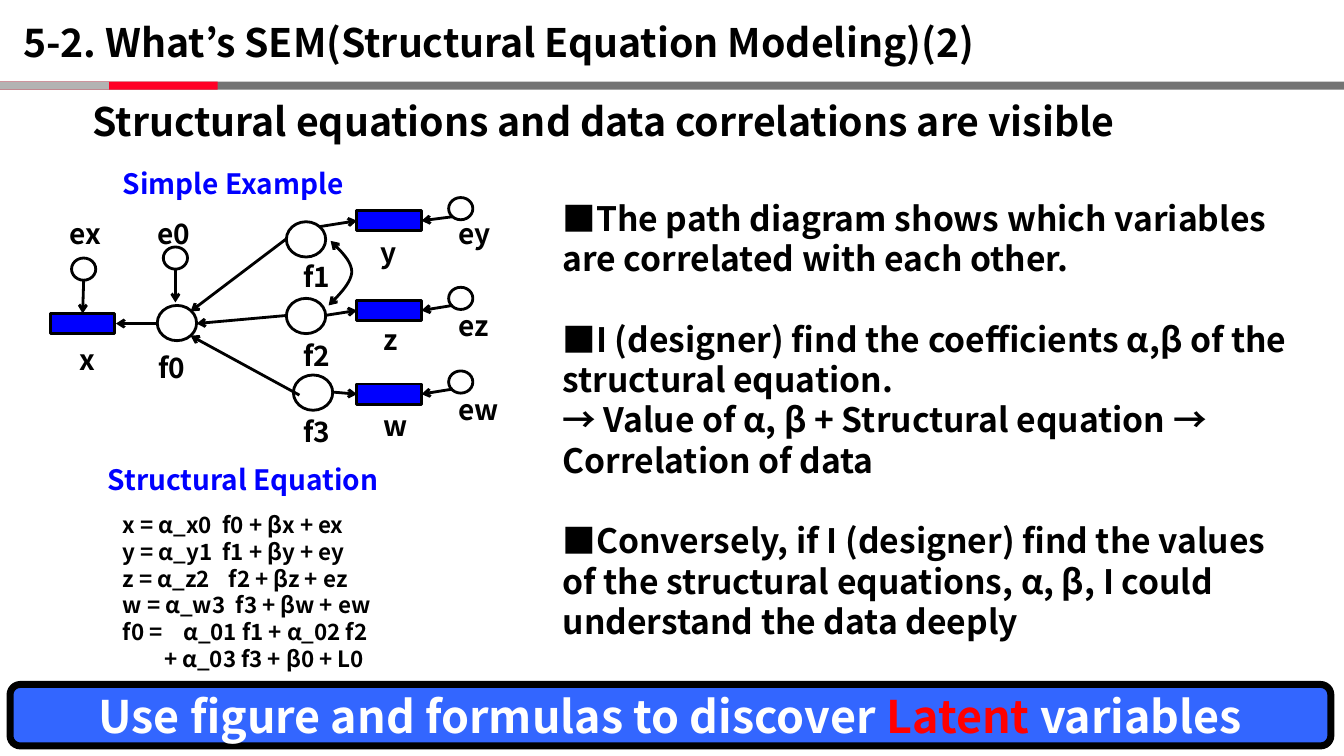
from lxml import etree
from pptx import Presentation
from pptx.dml.color import RGBColor
from pptx.enum.shapes import MSO_CONNECTOR as CONNECTOR, MSO_SHAPE as SHAPE
from pptx.enum.text import MSO_ANCHOR as ANCHOR, MSO_AUTO_SIZE as AUTO_SIZE, PP_ALIGN as ALIGN
from pptx.oxml.ns import qn
from pptx.util import Pt

EMU_PER_PX = 9144
COLORS = {
    "black": "000000", "white": "FFFFFF", "blue": "0000FF", "banner": "3366FF",
    "red": "FF0000", "rule": "737373", "rule red": "FF0026", "rule light": "B3B3B3",
}


def px(value):
    return round(value * EMU_PER_PX)


class SlideBuilder:
    """Draws styled elements on one slide, with lengths in px of 1/100 inch."""

    font_name = "Noto Sans CJK JP"
    line_height = 1.2
    frame_format = {"word_wrap": True, "auto_size": AUTO_SIZE.NONE, "vertical_anchor": ANCHOR.TOP}
    paragraph_format = {"alignment": ALIGN.LEFT, "space_before": Pt(0), "space_after": Pt(0)}

    def __init__(self, slide):
        self.slide = slide
        self.shapes = slide.shapes

    def color(self, name):
        return RGBColor.from_string(COLORS[name])

    def style(self, target, values):
        for name, value in values.items():
            setattr(target, name, value)

    def place(self, shape, box):
        self.style(shape, dict(zip(("left", "top", "width", "height"), map(px, box))))

    def fill_text(self, shape, paragraphs, size, color="black", frame=None, layout=None):
        text_frame = shape.text_frame
        self.style(text_frame, {**self.frame_format, **(frame or {})})
        for index, content in enumerate(paragraphs):
            paragraph = text_frame.add_paragraph() if index else text_frame.paragraphs[0]
            spacing = {"line_spacing": Pt(size * self.line_height)}
            self.style(paragraph, {**self.paragraph_format, **spacing, **(layout or {})})
            runs = [(content, color)] if isinstance(content, str) else content
            for text, run_color in runs:
                run = paragraph.add_run()
                run.text = text
                self.style(run.font, {"name": self.font_name, "size": Pt(size), "bold": True})
                run.font.color.rgb = self.color(run_color)
                etree.SubElement(run._r.get_or_add_rPr(), qn("a:ea"), typeface=self.font_name)
        return text_frame.paragraphs

    def text(self, box, paragraphs, size, color="black"):
        return self.fill_text(self.shapes.add_textbox(*map(px, box)), paragraphs, size, color)

    def placeholder(self, shape, box, paragraphs, size):
        self.place(shape, box)
        filled = self.fill_text(shape, paragraphs, size)
        for paragraph in filled:
            self.indent(paragraph, 0)
            etree.SubElement(paragraph._p.get_or_add_pPr(), qn("a:buNone"))
        return filled

    def indent(self, paragraph, margin):
        properties = paragraph._p.get_or_add_pPr()
        properties.set("marL", str(px(margin)))
        properties.set("indent", "0")

    def tab_stop(self, paragraph, position):
        tabs = etree.SubElement(paragraph._p.get_or_add_pPr(), qn("a:tabLst"))
        etree.SubElement(tabs, qn("a:tab"), pos=str(px(position)), algn="l")

    def shape(self, kind, box, fill=None, line=None, width=2):
        shape = self.shapes.add_shape(kind, *map(px, box))
        return self.paint(shape, fill, line, width)

    def paint(self, shape, fill=None, line=None, width=2):
        shape.shadow.inherit = False
        for part, name in ((shape.fill, fill), (shape.line.fill, line)):
            if name:
                part.solid()
                part.fore_color.rgb = self.color(name)
            else:
                part.background()
        if line:
            shape.line.width = Pt(width)
        return shape

    def arrowheads(self, shape, ends):
        outline = shape._element.spPr.find(qn("a:ln"))
        for end in ends:
            etree.SubElement(outline, qn(f"a:{end}"), type="arrow")

    def arrow(self, start, end):
        connector = self.shapes.add_connector(CONNECTOR.STRAIGHT, *map(px, start + end))
        connector.line.color.rgb = self.color("black")
        connector.line.width = Pt(2)
        self.arrowheads(connector, ["tailEnd"])
        etree.SubElement(connector._element.spPr, qn("a:effectLst"))

    def curve(self, beziers, steps=10):
        points = [beziers[0][0]]
        for a, b, c, d in beziers:
            for t in (step / steps for step in range(1, steps + 1)):
                weights = ((1 - t) ** 3, 3 * t * (1 - t) ** 2, 3 * t * t * (1 - t), t ** 3)
                points.append(tuple(
                    sum(w * p[axis] for w, p in zip(weights, (a, b, c, d))) for axis in (0, 1)
                ))
        points = [(px(x), px(y)) for x, y in points]
        freeform = self.shapes.build_freeform(*points[0], scale=1.0)
        freeform.add_line_segments(points[1:], close=False)
        shape = self.paint(freeform.convert_to_shape(), line="black")
        self.arrowheads(shape, ["headEnd", "tailEnd"])


def draw_header(builder):
    for width, color in ((1333, "rule"), (216, "rule red"), (108, "rule light")):
        builder.shape(SHAPE.RECTANGLE, (0, 81, width, 8), color)
    title = ["5-2. What’s SEM(Structural Equation Modeling)(2)"]
    builder.placeholder(builder.shapes.title, (13, 13, 1069, 57), title, 28)
    subtitle = ["Structural equations and data correlations are visible"]
    builder.text((82, 92, 1120, 57), subtitle, 28)


def draw_diagram(builder):
    builder.text((112, 160, 277, 44), ["Simple Example"], 20, "blue")
    for left, top in ((156, 303), (284, 220), (284, 296), (291, 372)):
        builder.shape(SHAPE.OVAL, (left, top, 39, 35), line="black")
    for left, top in ((71, 256), (162, 245), (445, 196), (445, 285), (445, 368)):
        builder.shape(SHAPE.OVAL, (left, top, 24, 22), line="black")
    for left, top in ((50, 311), (354, 209), (354, 298), (354, 381)):
        builder.shape(SHAPE.RECTANGLE, (left, top, 64, 20), "blue", "black")
    for start, end in (
        ((284, 237), (189, 309)), ((284, 313), (195, 321)), ((297, 392), (189, 333)),
        ((156, 321), (115, 321)), ((83, 278), (82, 311)), ((174, 267), (174, 300)),
        ((316, 225), (354, 219)), ((322, 313), (354, 308)), ((330, 389), (354, 391)),
        ((449, 215), (418, 219)), ((449, 303), (418, 308)), ((449, 386), (418, 391)),
    ):
        builder.arrow(start, end)
    builder.curve([
        ((328, 239), (338, 249), (349, 259), (349, 270)),
        ((349, 270), (348, 281), (337, 292), (326, 303)),
    ])
    for label, left, top, width in (
        ("x", 69, 335, 32), ("y", 368, 229, 32), ("z", 371, 315, 32), ("w", 371, 400, 32),
        ("f0", 147, 343, 57), ("f1", 291, 253, 57), ("f2", 291, 331, 57), ("f3", 291, 406, 57),
        ("ex", 59, 210, 57), ("e0", 146, 210, 57),
        ("ey", 445, 210, 57), ("ez", 445, 301, 57), ("ew", 445, 384, 74),
    ):
        builder.text((left, top, width, 36), [label], 20)


def draw_equations(builder):
    builder.text((97, 454, 356, 44), ["Structural Equation"], 20, "blue")
    equations = {
        "x = α_x0\tf0 + βx + ex": 99,
        "y = α_y1\tf1 + βy + ey": 99,
        "z = α_z2\tf2 + βz + ez": 105,
        "w = α_w3\tf3 + βw + ew": 112,
        "f0 =\tα_01 f1 + α_02 f2": 60,
        "+ α_03 f3 + β0 + L0": None,
    }
    paragraphs = builder.text((112, 502, 358, 172), equations, 16)
    for paragraph, tab in zip(paragraphs, equations.values()):
        if tab:
            builder.tab_stop(paragraph, tab)
        else:
            builder.indent(paragraph, 41)


def draw_explanation(builder):
    points = [
        "■The path diagram shows which variables are correlated with each other.",
        "■I (designer) find the coefficients α,β of the structural equation.",
        "→ Value of α, β + Structural equation → Correlation of data",
        "■Conversely, if I (designer) find the values of the structural equations, "
        "α, β, I could understand the data deeply",
    ]
    body = builder.slide.placeholders[1]
    paragraphs = builder.placeholder(body, (548, 191, 739, 454), points, 24)
    for index in (1, 3):
        paragraphs[index].space_before = Pt(24 * builder.line_height)


def draw_banner(builder):
    banner = builder.shape(SHAPE.ROUNDED_RECTANGLE, (10, 679, 1310, 61), "banner", "black", 5)
    message = [
        ("Use figure and formulas to discover ", "white"),
        ("Latent ", "red"),
        ("variables", "white"),
    ]
    builder.fill_text(banner, [message], 32, frame={"vertical_anchor": ANCHOR.MIDDLE},
                      layout={"alignment": ALIGN.CENTER})


def main():
    presentation = Presentation()
    presentation.slide_width, presentation.slide_height = px(1333), px(750)
    builder = SlideBuilder(presentation.slides.add_slide(presentation.slide_layouts[1]))
    for draw in (draw_header, draw_banner, draw_diagram, draw_equations, draw_explanation):
        draw(builder)
    presentation.save("out.pptx")


if __name__ == "__main__":
    main()
